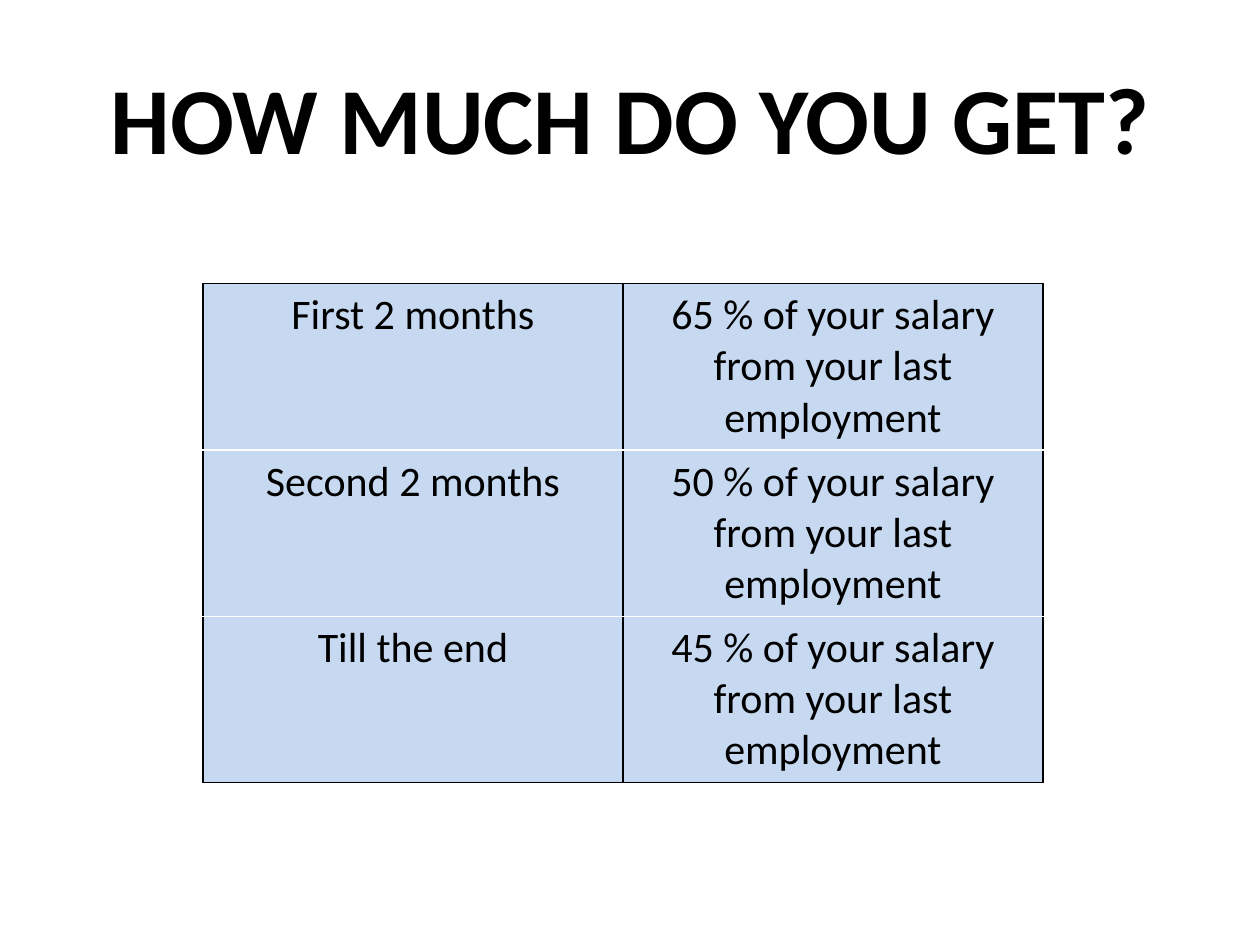
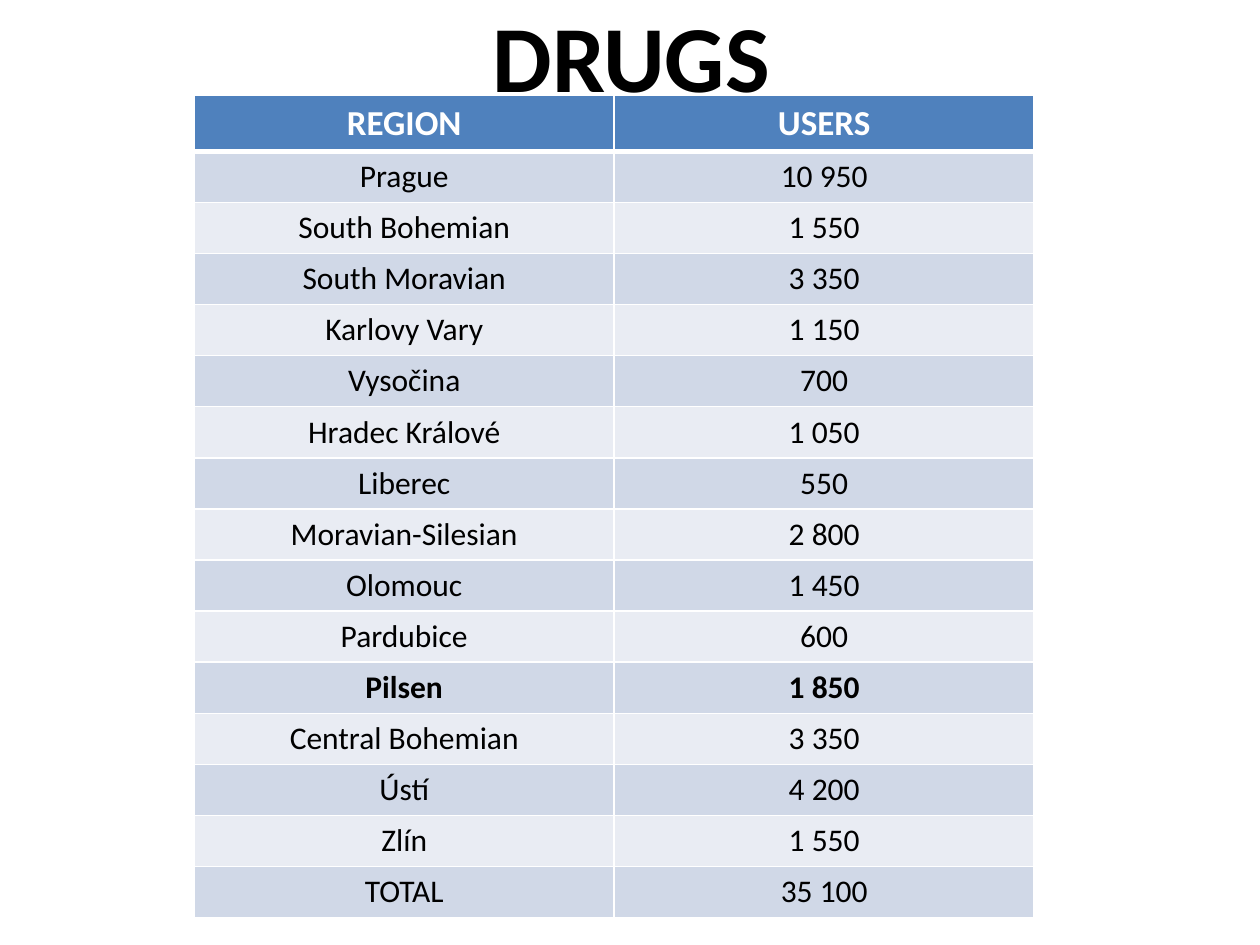
from dataclasses import dataclass

from lxml.etree import SubElement
from pptx import Presentation
from pptx.dml.color import RGBColor as RGB
from pptx.enum.text import MSO_ANCHOR as Anchor, MSO_AUTO_SIZE as Fit, PP_ALIGN as Align
from pptx.oxml.ns import qn
from pptx.util import Pt


@dataclass(frozen=True)
class Theme:
    font: str = "Calibri"
    black: str = "000000"
    white: str = "FFFFFF"
    sky: str = "C6D9F1"
    blue: str = "4F81BD"
    bands: tuple = ("D0D8E7", "E9ECF3")
    title: int = 54
    large: int = 24
    head: int = 20
    body: int = 18
    thin: float = 0.96
    thick: float = 3
    col: int = 240


THEME = Theme()

PAY = [
    ("First 2 months", "65 % of your salary from your last employment"),
    ("Second 2 months", "50 % of your salary from your last employment"),
    ("Till the end", "45 % of your salary from your last employment"),
]

USERS = [
    ("REGION", "USERS"),
    ("Prague", "10 950"),
    ("South Bohemian", "1 550"),
    ("South Moravian", "3 350"),
    ("Karlovy Vary", "1 150"),
    ("Vysočina", "700"),
    ("Hradec Králové", "1 050"),
    ("Liberec", "550"),
    ("Moravian-Silesian", "2 800"),
    ("Olomouc", "1 450"),
    ("Pardubice", "600"),
    ("Pilsen", "1 850"),
    ("Central Bohemian", "3 350"),
    ("Ústí", "4 200"),
    ("Zlín", "1 550"),
    ("TOTAL", "35 100"),
]


def write(frame, text, size, color=THEME.black, bold=False, align=Align.CENTER):
    """Fill a text frame with one formatted paragraph."""
    para = frame.paragraphs[0]
    para.alignment = align
    run = para.add_run()
    run.text = text
    font = run.font
    font.name, font.size, font.bold = THEME.font, Pt(size), bold
    font.color.rgb = RGB.from_string(color)


def edge(cell, side, color, width):
    """Draw one border of a table cell; call before setting the fill."""
    line = SubElement(cell._tc.get_or_add_tcPr(), qn(f"a:ln{side}"), w=str(Pt(width)))
    fill = SubElement(line, qn("a:solidFill"))
    SubElement(fill, qn("a:srgbClr"), val=color)


class Deck:
    def __init__(self, theme):
        self.theme = theme
        self.prs = Presentation()
        self.prs.slide_width, self.prs.slide_height = Pt(720), Pt(540)
        self.slide = None

    def page(self, text, left, top):
        """Start a slide with its title."""
        self.slide = self.prs.slides.add_slide(self.prs.slide_layouts[5])
        title = self.slide.shapes.title
        title.left, title.top = Pt(left), Pt(top)
        title.width, title.height = Pt(648), Pt(90)
        frame = title.text_frame
        frame.auto_size = Fit.NONE
        frame.vertical_anchor = Anchor.MIDDLE
        write(frame, text, self.theme.title, bold=True)

    def table(self, rows, left, top, high, size, fills, line, head=False, strong=()):
        """Add a table whose fills alternate below an optional header row."""
        look = self.theme
        cols = len(rows[0])
        grid = self.slide.shapes.add_table(
            len(rows), cols, Pt(left), Pt(top), Pt(cols * look.col), Pt(high * len(rows))
        ).table
        grid.first_row, grid.horz_banding = head, False
        for col in grid.columns:
            col.width = Pt(look.col)
        for i, row in enumerate(rows):
            grid.rows[i].height = Pt(high)
            top_row = head and i == 0
            fill = look.blue if top_row else fills[(i - head) % len(fills)]
            for j, text in enumerate(row):
                cell = grid.cell(i, j)
                # Borders: a shared edge belongs to the row above it
                for side in ("L", "R", "T", "B") if i == 0 else ("L", "R", "B"):
                    wide = top_row and side == "B"
                    edge(cell, side, line, look.thick if wide else look.thin)
                cell.fill.solid()
                cell.fill.fore_color.rgb = RGB.from_string(fill)
                write(
                    cell.text_frame,
                    text,
                    look.head if top_row else size,
                    color=look.white if top_row else look.black,
                    bold=top_row or row[0] in strong,
                )


def main():
    deck = Deck(THEME)

    # Benefit rates
    deck.page("HOW MUCH DO YOU GET?", 36, 21.6)
    deck.table(PAY, 116, 162, 79.2, THEME.large, [THEME.sky], THEME.black)

    # Users by region
    deck.page("DRUGS", 36.7, -13.7)
    deck.table(USERS, 111, 54.7, 29.2, THEME.body, THEME.bands, THEME.white,
               head=True, strong=("Pilsen",))

    deck.prs.save("out.pptx")


if __name__ == "__main__":
    main()
